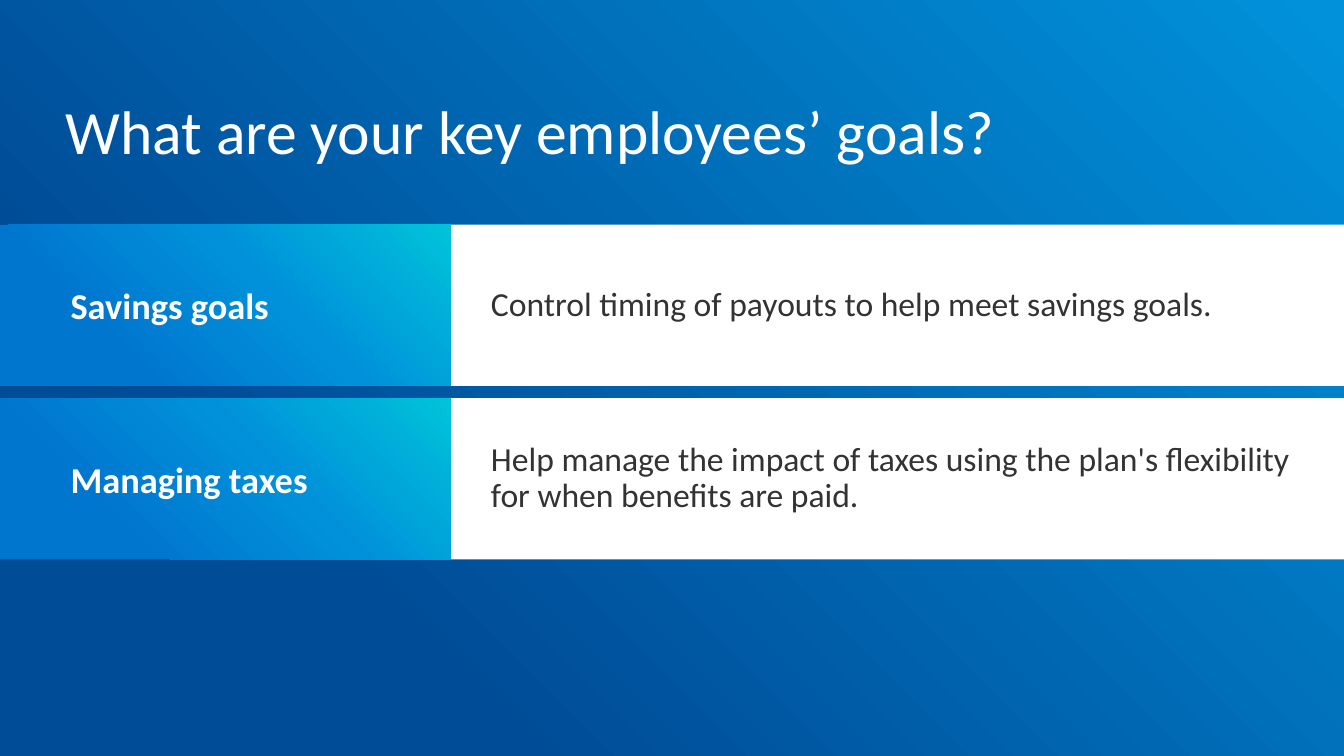
from lxml import etree
from pptx import Presentation
from pptx.dml.color import RGBColor
from pptx.enum.shapes import MSO_SHAPE
from pptx.enum.text import MSO_ANCHOR, PP_ALIGN
from pptx.oxml.ns import qn
from pptx.util import Inches, Pt

RECTANGLE = MSO_SHAPE.RECTANGLE
MIDDLE = MSO_ANCHOR.MIDDLE
LEFT = PP_ALIGN.LEFT

SLIDE_W, SLIDE_H = 13.33, 7.5
LABEL_W, ROW_H = 4.47, 1.6
FIRST_ROW, ROW_PITCH = 2.23, 1.72
BACKDROP_STOPS = [(25, "004C97"), (99, "0091DA")]
LABEL_STOPS = [(25, "0076CF"), (60, "0091DA"), (100, "00C3D9")]
GOALS = [
    ("Savings goals", "Control timing of payouts to help meet savings goals."),
    ("Managing taxes", "Help manage the impact of taxes using the plan's flexibility for when benefits are paid."),
]


def add_panel(left, top, width, height, stops):
    panel = slide.shapes.add_shape(RECTANGLE, Inches(left), Inches(top), Inches(width), Inches(height))
    panel.shadow.inherit = False
    panel.line.fill.background()
    if len(stops) == 1:
        panel.fill.solid()
        panel.fill.fore_color.rgb = RGBColor.from_string(stops[0][1])
        return panel
    panel.fill.gradient()
    panel.fill.gradient_angle = 45
    stop_list = panel._element.spPr.find(".//" + qn("a:gsLst"))
    for old_stop in list(stop_list):
        stop_list.remove(old_stop)
    for position, color in stops:
        stop = etree.SubElement(stop_list, qn("a:gs"), pos=str(position * 1000))
        etree.SubElement(stop, qn("a:srgbClr"), val=color)
    return panel


def write(shape, text, size, color, insets, bold=False):
    frame = shape.text_frame
    frame.word_wrap = True
    frame.vertical_anchor = MIDDLE
    frame.margin_left, frame.margin_top, frame.margin_right, frame.margin_bottom = map(Inches, insets)
    paragraph = frame.paragraphs[0]
    paragraph.text = text
    paragraph.alignment = LEFT
    paragraph.font.name = "Calibri"
    paragraph.font.size = Pt(size)
    paragraph.font.bold = bold
    paragraph.font.color.rgb = RGBColor.from_string(color)
    return paragraph


prs = Presentation()
prs.slide_width = Inches(SLIDE_W)
prs.slide_height = Inches(SLIDE_H)
slide = prs.slides.add_slide(prs.slide_layouts[6])

add_panel(0, 0, SLIDE_W, SLIDE_H, BACKDROP_STOPS)

title = slide.shapes.add_textbox(Inches(0.65), Inches(0.92), Inches(12), Inches(0.74))
write(title, "What are your key employees’ goals?", 44, "FFFFFF", (0, 0, 0, 0))

for row, (goal, explanation) in enumerate(GOALS):
    top = FIRST_ROW + row * ROW_PITCH
    answer = add_panel(LABEL_W, top, SLIDE_W - LABEL_W, ROW_H, [(0, "FFFFFF")])
    answer_text = write(answer, explanation, 24, "333333", (0.4, 0.4, 0.4, 0.4))
    answer_text.line_spacing = 0.9
    answer_text.space_after = Pt(8)
    label = add_panel(0, top, LABEL_W, ROW_H, LABEL_STOPS)
    write(label, goal, 26, "FFFFFF", (0.7, 0.05, 0.4, 0.05), bold=True)

prs.save("out.pptx")
